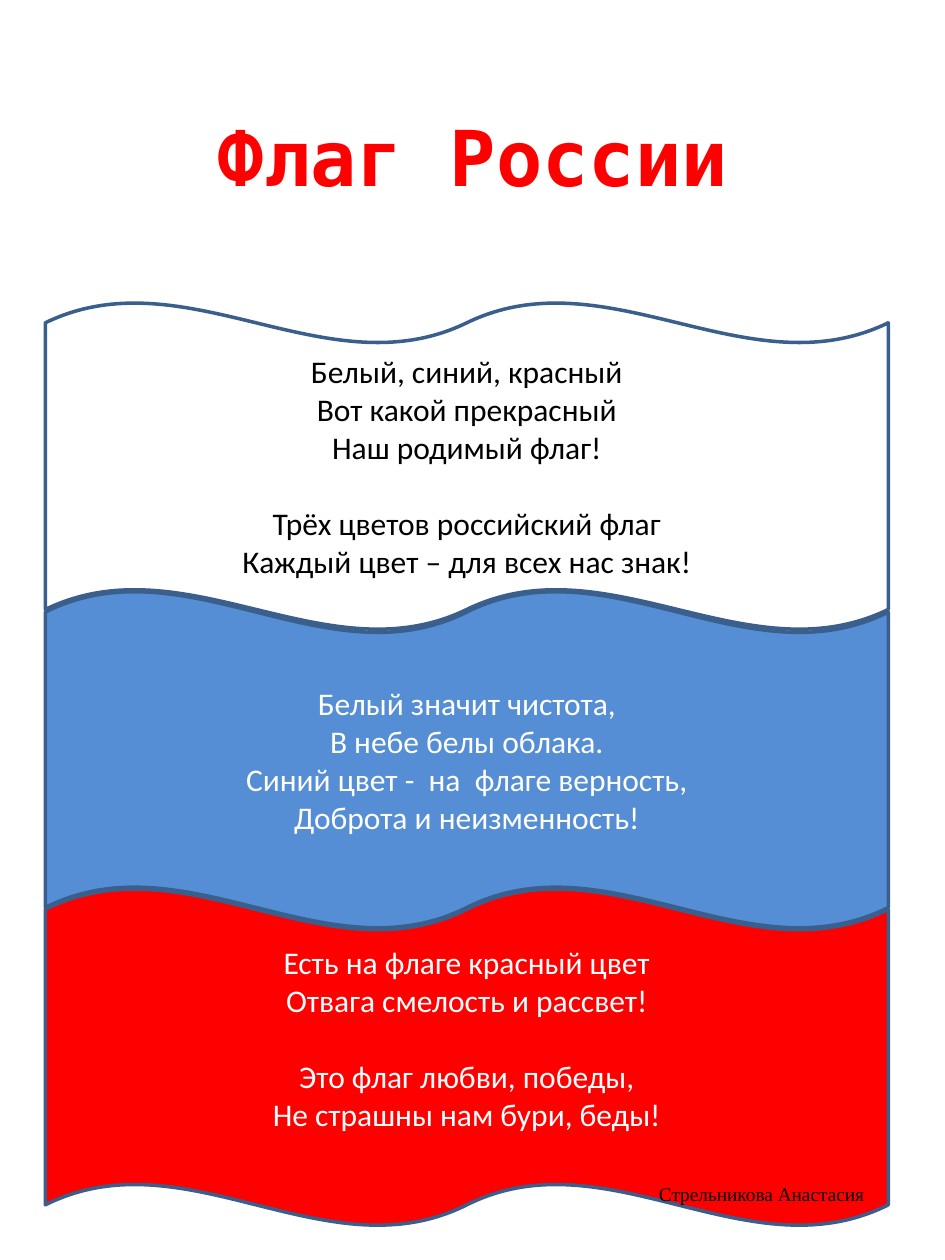
import pptx
import pptx.dml.color
import pptx.enum.shapes
import pptx.enum.text
import pptx.util

Inches = pptx.util.Inches
Pt = pptx.util.Pt
LINE_HEIGHT = 22  # points, one line of 18 pt text

STRIPES = [
    # top, height, fill, text colour, bottom inset, stanzas
    (2.4, 2.6, "FFFFFF", "000000", 0.05, [
        ["Белый, синий, красный", "Вот какой прекрасный", "Наш родимый флаг!"],
        ["Трёх цветов российский флаг", "Каждый цвет – для всех нас знак!"]]),
    (4.69, 2.68, "558ED5", "FFFFFF", 0.05, [
        ["Белый значит чистота,", "В небе белы облака.",
         "Синий цвет -  на  флаге верность,", "Доброта и неизменность!"]]),
    (7.05, 2.68, "FF0000", "FFFFFF", 0.35, [
        ["Есть на флаге красный цвет", "Отвага смелость и рассвет!"],
        ["Это флаг любви, победы,", "Не страшны нам бури, беды!"]]),
]


def rgb(value):
    return pptx.dml.color.RGBColor.from_string(value)


def write(p, text, font="Calibri", size=18, color="000000", bold=False, before=0):
    p.alignment = pptx.enum.text.PP_ALIGN.CENTER
    p.space_before = Pt(before)
    r = p.add_run()
    r.text = text
    r.font.name = font
    r.font.size = Pt(size)
    r.font.bold = bold
    r.font.color.rgb = rgb(color)


def place_title(s, box):
    sp = s.shapes.title
    sp.left, sp.top, sp.width, sp.height = map(Inches, box)
    sp.text_frame.vertical_anchor = pptx.enum.text.MSO_ANCHOR.MIDDLE
    write(sp.text_frame.paragraphs[0], "Флаг России",
          font="DejaVu Sans Mono", size=44, color="FF0000", bold=True)


def add_stripe(s, box, fill, color, bottom_inset, stanzas):
    sp = s.shapes.add_shape(pptx.enum.shapes.MSO_SHAPE.DOUBLE_WAVE, *map(Inches, box))
    sp.shadow.inherit = False
    sp.fill.solid()
    sp.fill.fore_color.rgb = rgb(fill)
    sp.line.color.rgb = rgb("3A5F8C")
    sp.line.width = Pt(2)
    tf = sp.text_frame
    tf.word_wrap = True
    tf.vertical_anchor = pptx.enum.text.MSO_ANCHOR.MIDDLE
    tf.margin_bottom = Inches(bottom_inset)
    for i, stanza in enumerate(stanzas):
        for j, verse in enumerate(stanza):
            p = tf.add_paragraph() if i or j else tf.paragraphs[0]
            write(p, verse, color=color, before=LINE_HEIGHT if i and not j else 0)


def add_author(s, box):
    tf = s.shapes.add_textbox(*map(Inches, box)).text_frame
    tf.word_wrap = False
    tf.auto_size = pptx.enum.text.MSO_AUTO_SIZE.SHAPE_TO_FIT_TEXT
    write(tf.paragraphs[0], "Стрельникова Анастасия", font="Times New Roman", size=11)


def main():
    prs = pptx.Presentation()
    prs.slide_width, prs.slide_height = Inches(7.5), Inches(10)
    s = prs.slides.add_slide(prs.slide_layouts[5])
    place_title(s, (0.38, 0.4, 6.75, 1.67))
    for top, height, *style in STRIPES:
        add_stripe(s, (0.36, top, 6.69, height), *style)
    add_author(s, (5.1, 9.33, 1.89, 0.29))
    prs.save("out.pptx")


if __name__ == "__main__":
    main()
